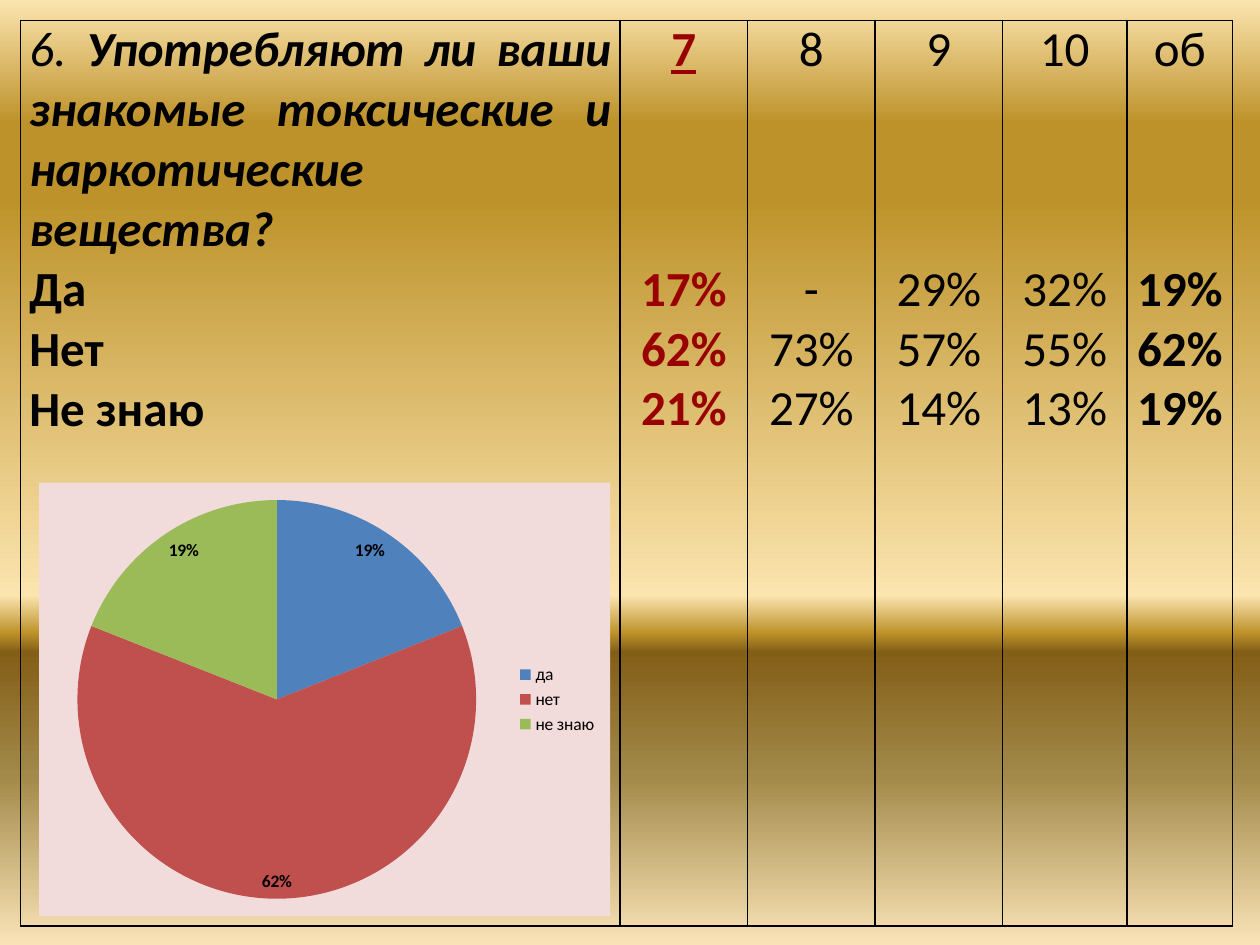
import dataclasses

import lxml.etree
import pptx
import pptx.chart.chart
import pptx.chart.data
import pptx.dml.color
import pptx.enum.chart
import pptx.enum.text
import pptx.oxml
import pptx.oxml.ns
import pptx.slide
import pptx.table
import pptx.text.text
import pptx.util

Cm = pptx.util.Cm
Pt = pptx.util.Pt
qn = pptx.oxml.ns.qn
ALIGN = pptx.enum.text.PP_ALIGN

FONT = "Calibri"
TEXT_SIZE = 28
QUESTION_GAP = Pt(102.5)
COLORS = {
    "text": "000000",
    "highlight": "990000",
    "chart_area": "F2DCDB",
    "yes": "4F81BD",
    "no": "C0504D",
    "unknown": "9BBB59",
    "light": "FBE4AE",
    "gold": "BD922A",
    "brown": "835E17",
    "khaki": "A28949",
    "cream": "FAE3B7",
}
GOLD_STOPS = [
    (0, "light"), (13, "gold"), (21, "gold"), (63, "light"),
    (67, "gold"), (69, "brown"), (82, "khaki"), (100, "cream"),
]


@dataclasses.dataclass
class GradeColumn:
    grade: str
    shares: tuple[str, str, str]
    width: float
    color: str = "text"
    bold_grade: bool = False
    bold_shares: bool = False


QUESTION = "Употребляют ли ваши знакомые токсические и наркотические вещества?"
ANSWERS = ("Да", "Нет", "Не знаю")
QUESTION_WIDTH = 12.09
GRADES = [
    GradeColumn("7", ("17%", "62%", "21%"), 2.57, "highlight", True, True),
    GradeColumn("8", ("-", "73%", "27%"), 2.57),
    GradeColumn("9", ("29%", "57%", "14%"), 2.57),
    GradeColumn("10", ("32%", "55%", "13%"), 2.51),
    GradeColumn("об", ("19%", "62%", "19%"), 2.13, bold_shares=True),
]


def rgb(name: str) -> pptx.dml.color.RGBColor:
    return pptx.dml.color.RGBColor.from_string(COLORS[name])


def paint_background(slide: pptx.slide.Slide) -> None:
    fill = slide.background.fill
    fill.gradient()
    fill.gradient_angle = 270
    stops = next(slide.element.iter(qn("a:gsLst")))
    for default_stop in list(stops):
        stops.remove(default_stop)
    for percent, name in GOLD_STOPS:
        stop = lxml.etree.SubElement(stops, qn("a:gs"), pos=str(percent * 1000))
        lxml.etree.SubElement(stop, qn("a:srgbClr"), val=COLORS[name])


def style_run(run: pptx.text.text._Run, color: str, bold: bool, italic: bool = False) -> None:
    run.font.name = FONT
    run.font.size = Pt(TEXT_SIZE)
    run.font.bold = bold
    run.font.italic = italic
    run.font.color.rgb = rgb(color)


def style_cell(cell: pptx.table._Cell) -> None:
    cell.margin_left = cell.margin_right = Cm(0.18)
    cell.margin_top = cell.margin_bottom = 0
    cell.fill.background()
    properties = cell._tc.get_or_add_tcPr()
    for position, side in enumerate(("lnL", "lnR", "lnT", "lnB")):
        border = pptx.oxml.parse_xml(
            f'<a:{side} {pptx.oxml.ns.nsdecls("a")} w="12700"><a:solidFill>'
            f'<a:srgbClr val="{COLORS["text"]}"/></a:solidFill></a:{side}>'
        )
        properties.insert(position, border)


def fill_question(cell: pptx.table._Cell) -> None:
    style_cell(cell)
    question = cell.text_frame.paragraphs[0]
    for text, bold in (("6. ", False), (QUESTION, True)):
        run = question.add_run()
        run.text = text
        style_run(run, "text", bold, italic=True)
    for answer in ANSWERS:
        paragraph = cell.text_frame.add_paragraph()
        paragraph.text = answer
        style_run(paragraph.runs[0], "text", True)
    for paragraph in cell.text_frame.paragraphs:
        paragraph.alignment = ALIGN.JUSTIFY


def fill_grade(cell: pptx.table._Cell, column: GradeColumn) -> None:
    style_cell(cell)
    cell.text_frame.text = "\n".join((column.grade, *column.shares))
    heading, *shares = cell.text_frame.paragraphs
    style_run(heading.runs[0], column.color, column.bold_grade)
    heading.runs[0].font.underline = column.color == "highlight"
    heading.alignment = ALIGN.CENTER
    for share in shares:
        style_run(share.runs[0], column.color, column.bold_shares)
        share.alignment = ALIGN.CENTER
    shares[0].space_before = QUESTION_GAP


def add_survey_table(slide: pptx.slide.Slide) -> None:
    widths = [QUESTION_WIDTH] + [column.width for column in GRADES]
    survey = slide.shapes.add_table(
        1, len(widths), Cm(0.41), Cm(0.41), Cm(sum(widths)), Cm(18.26)
    ).table
    survey.first_row = False
    survey.horz_banding = False
    for table_column, width in zip(survey.columns, widths):
        table_column.width = Cm(width)
    fill_question(survey.cell(0, 0))
    for index, column in enumerate(GRADES, start=1):
        fill_grade(survey.cell(0, index), column)


def fill_chart_area(chart: pptx.chart.chart.Chart) -> None:
    area = pptx.oxml.parse_xml(
        f'<c:spPr {pptx.oxml.ns.nsdecls("c", "a")}><a:solidFill>'
        f'<a:srgbClr val="{COLORS["chart_area"]}"/></a:solidFill>'
        "<a:ln><a:noFill/></a:ln></c:spPr>"
    )
    chart.element.find(qn("c:chart")).addnext(area)


def add_answer_pie(slide: pptx.slide.Slide) -> None:
    answers = pptx.chart.data.CategoryChartData(number_format="0%")
    answers.categories = [answer.lower() for answer in ANSWERS]
    answers.add_series("Series 1", (0.19, 0.62, 0.19))
    chart = slide.shapes.add_chart(
        pptx.enum.chart.XL_CHART_TYPE.PIE,
        Cm(0.79), Cm(9.73), Cm(11.51), Cm(8.74), answers,
    ).chart
    chart.has_title = False
    chart.font.name = FONT
    chart.font.size = Pt(10)
    chart.font.color.rgb = rgb("text")
    chart.has_legend = True
    chart.legend.position = pptx.enum.chart.XL_LEGEND_POSITION.RIGHT
    chart.legend.include_in_layout = False
    fill_chart_area(chart)

    pie = chart.plots[0]
    pie.vary_by_categories = True
    for index, name in enumerate(("yes", "no", "unknown")):
        slice_fill = pie.series[0].points[index].format.fill
        slice_fill.solid()
        slice_fill.fore_color.rgb = rgb(name)
    labels = pie.series[0].data_labels
    labels.show_value = True
    labels.number_format = "0%"
    labels.number_format_is_linked = False
    labels.position = pptx.enum.chart.XL_LABEL_POSITION.INSIDE_END
    labels.font.name = FONT
    labels.font.size = Pt(10)
    labels.font.bold = True
    labels.font.color.rgb = rgb("text")


def main() -> None:
    presentation = pptx.Presentation()
    presentation.slide_width = Cm(25.4)
    presentation.slide_height = Cm(19.05)
    slide = presentation.slides.add_slide(presentation.slide_layouts[6])
    paint_background(slide)
    add_survey_table(slide)
    add_answer_pie(slide)
    presentation.save("out.pptx")


if __name__ == "__main__":
    main()
